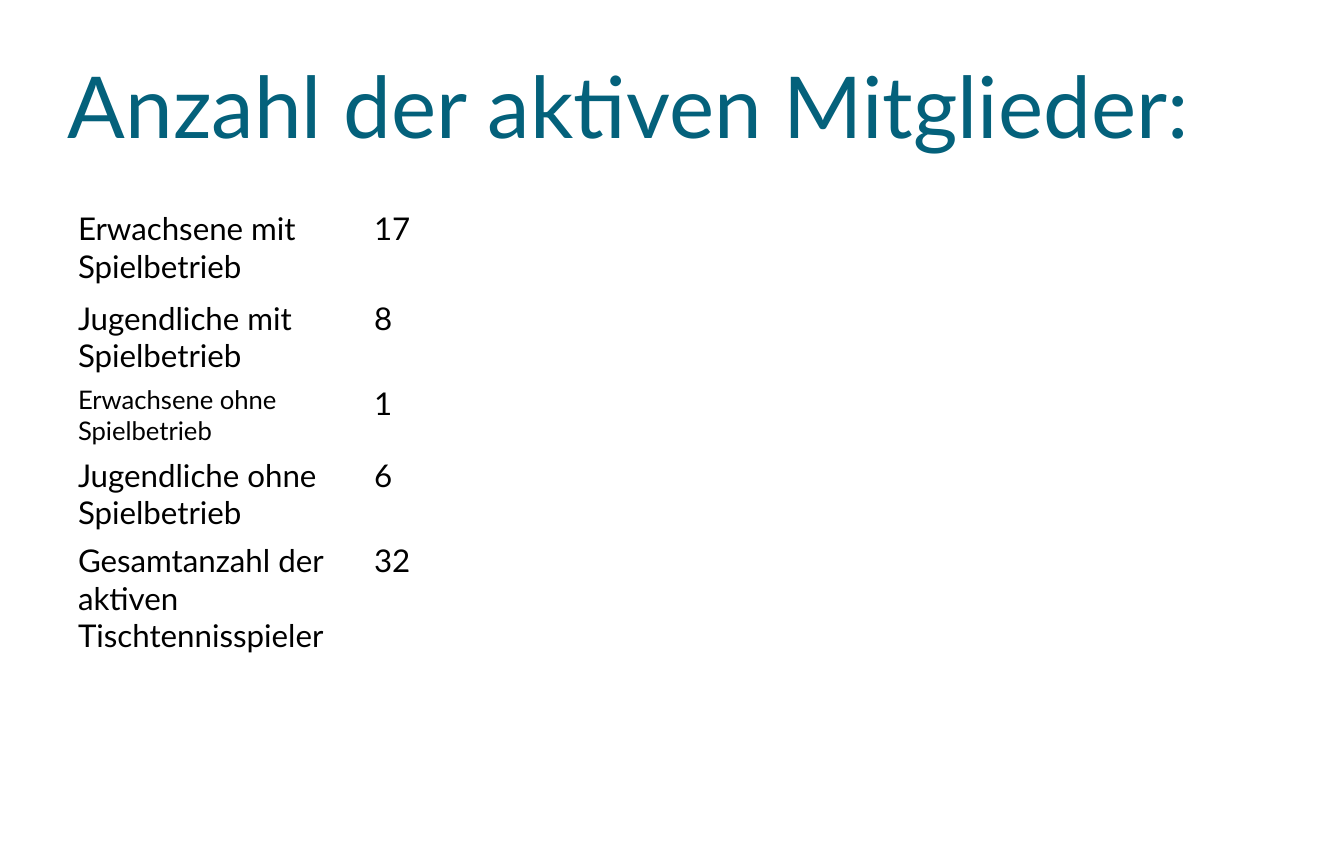
from dataclasses import dataclass

from pptx import Presentation
from pptx.dml.color import RGBColor
from pptx.enum.text import MSO_ANCHOR
from pptx.slide import Slide
from pptx.table import _Cell
from pptx.text.text import TextFrame
from pptx.util import Cm, Pt

MIDDLE = MSO_ANCHOR.MIDDLE


@dataclass(frozen=True)
class Theme:
    font: str = "Lato"
    title_color: RGBColor = RGBColor(0x04, 0x61, 0x7B)
    text_color: RGBColor = RGBColor(0, 0, 0)
    title_size: int = 60
    body_size: int = 22
    small_size: int = 18


THEME = Theme()


@dataclass(frozen=True)
class MemberRow:
    label: str
    count: int
    height: float = 1.68
    label_size: int = THEME.body_size


MEMBER_ROWS = [
    MemberRow("Erwachsene mit Spielbetrieb", 17, height=2.21),
    MemberRow("Jugendliche mit Spielbetrieb", 8),
    MemberRow("Erwachsene ohne Spielbetrieb", 1, label_size=THEME.small_size),
    MemberRow("Jugendliche ohne Spielbetrieb", 6),
    MemberRow("Gesamtanzahl der aktiven Tischtennisspieler", 32, height=2.39),
]
LEFT = 1.68
COLUMN_WIDTH = 7.34


def write_text(tf: TextFrame, text: str, size: int, color: RGBColor) -> None:
    p = tf.paragraphs[0]
    p.text = text
    p.font.name = THEME.font
    p.font.size = Pt(size)
    p.font.color.rgb = color


def add_title(s: Slide, text: str) -> None:
    tf = s.shapes.add_textbox(Cm(LEFT), Cm(0.84), Cm(30), Cm(3.51)).text_frame
    tf.word_wrap = True
    tf.vertical_anchor = MIDDLE
    tf.margin_left = tf.margin_right = tf.margin_top = tf.margin_bottom = 0
    write_text(tf, text, THEME.title_size, THEME.title_color)


def fill_cell(cell: _Cell, text: str, size: int) -> None:
    cell.fill.background()
    write_text(cell.text_frame, text, size, THEME.text_color)


def add_member_table(s: Slide, rows: list[MemberRow]) -> None:
    height = sum(row.height for row in rows)
    table = s.shapes.add_table(
        len(rows), 2, Cm(LEFT), Cm(5.08), Cm(2 * COLUMN_WIDTH), Cm(height)
    ).table
    table.first_row = False
    table.horz_banding = False
    for column in table.columns:
        column.width = Cm(COLUMN_WIDTH)
    for i, row in enumerate(rows):
        table.rows[i].height = Cm(row.height)
        fill_cell(table.cell(i, 0), row.label, row.label_size)
        fill_cell(table.cell(i, 1), str(row.count), THEME.body_size)


def main() -> None:
    prs = Presentation()
    prs.slide_width = Cm(33.32)
    prs.slide_height = Cm(21)
    s = prs.slides.add_slide(prs.slide_layouts[6])
    add_title(s, "Anzahl der aktiven Mitglieder:")
    add_member_table(s, MEMBER_ROWS)
    prs.save("out.pptx")


if __name__ == "__main__":
    main()
